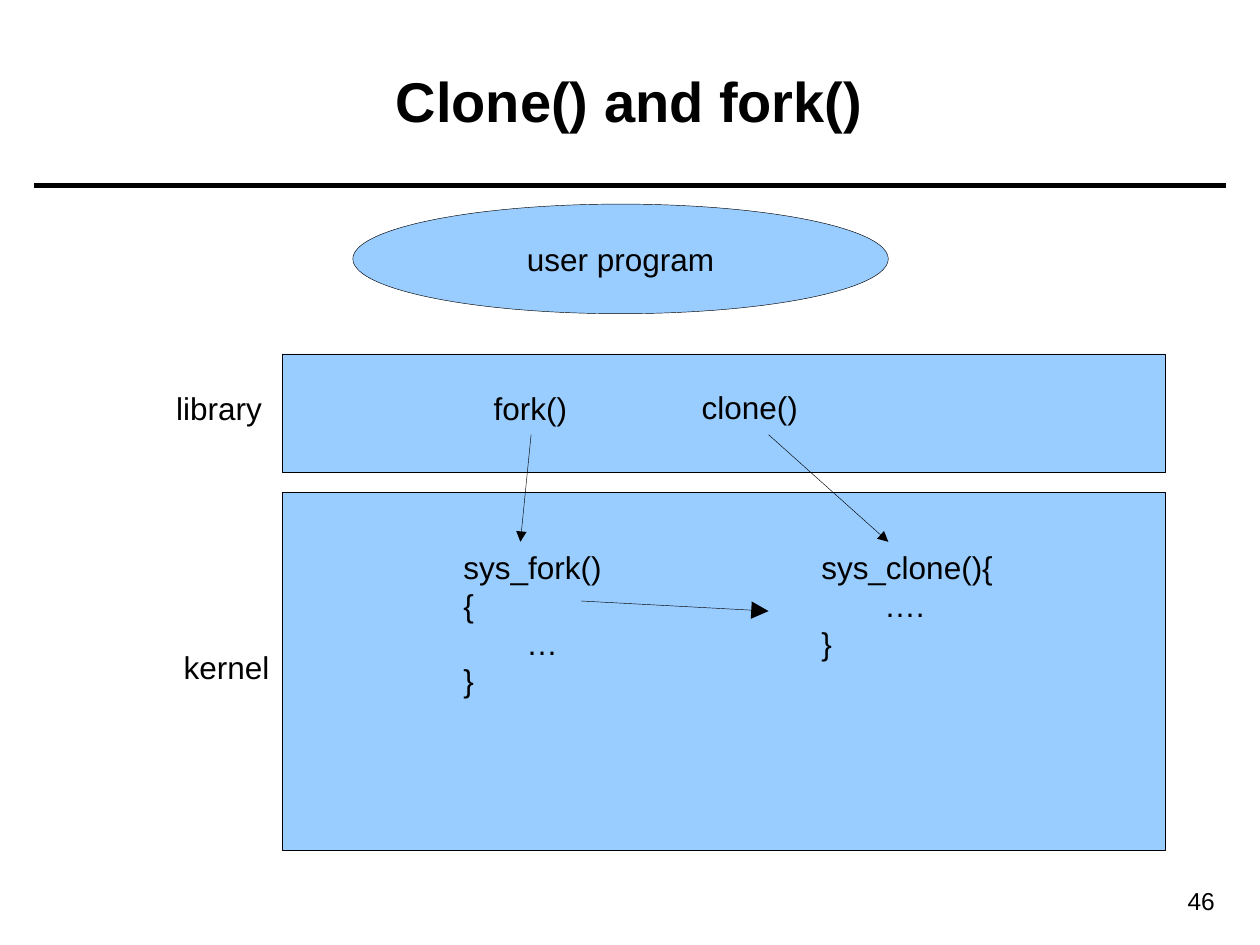
"""Build the slide on clone() and fork() as layers of user, library and kernel."""
from lxml.etree import SubElement
from pptx import Presentation
from pptx.dml.color import RGBColor
from pptx.enum.shapes import MSO_CONNECTOR, MSO_SHAPE
from pptx.enum.text import MSO_ANCHOR, MSO_AUTO_SIZE, PP_ALIGN
from pptx.oxml.ns import qn
from pptx.util import Inches, Pt

COLORS = {"ink": "000000", "fill": "99CCFF"}
COLS, ROWS = 100, 75
LEFT, WIDE = 22.4, 70.1

SHAPES = {
    "kernel": (MSO_SHAPE.RECTANGLE, (LEFT, 39.1, WIDE, 28.4), ""),
    "library": (MSO_SHAPE.RECTANGLE, (LEFT, 28.1, WIDE, 9.4), ""),
    "user": (MSO_SHAPE.OVAL, (28, 16.2, 42.5, 8.7), "user program"),
}
LABELS = [
    ("sys_clone(){\n\t….\n}", (64.2, 43, 15.6, 10)),
    ("sys_fork()\n{\n\t…\n}", (35.8, 43, 14.5, 13)),
    ("fork()", (38.2, 30.4, 7.9, 4.1)),
    ("clone()", (54.7, 30.3, 9.7, 4.1)),
    ("library", (13, 30.4, 8.8, 4)),
    ("kernel", (13.6, 50.9, 8.8, 4)),
]
TITLE = ("Clone() and fork()", (3.5, 1.7, 92.9, 12.5))
PAGE = ("46", (87, 69.8, 10.4, 3.4))
RULE = (2.7, 14.7, 97.3, 14.7)
ARROWS = [
    ((46.1, 47.7, 61, 48.5), "lg", None),
    ((61, 34.5, 70.5, 43), "med", None),
    ((42.1, 34.5, 41.3, 43), "med", "fork()"),
]

BODY = {"size": Pt(18), "name": "Arial", "bold": False}
HEAD = {**BODY, "size": Pt(32), "bold": True}
SMALL = {**BODY, "size": Pt(14)}
FREE = {"word_wrap": False, "auto_size": MSO_AUTO_SIZE.SHAPE_TO_FIT_TEXT}
MID = {"word_wrap": False, "vertical_anchor": MSO_ANCHOR.MIDDLE}
FIXED = {"word_wrap": True, "vertical_anchor": MSO_ANCHOR.MIDDLE}

deck = Presentation()
deck.slide_width, deck.slide_height = Inches(10), Inches(7.5)
slide = deck.slides.add_slide(deck.slide_layouts[6])


def place(cells):
    units = (deck.slide_width / COLS, deck.slide_height / ROWS) * 2
    return [round(cell * unit) for cell, unit in zip(cells, units)]


def tint(name):
    return RGBColor.from_string(COLORS[name])


def apply(item, values):
    for key, value in values.items():
        setattr(item, key, value)


def write(shape, text, font, frame, align=PP_ALIGN.LEFT):
    shape.text_frame.text = text
    apply(shape.text_frame, frame)
    for para in shape.text_frame.paragraphs:
        para.alignment = align
        for run in para.runs:
            apply(run.font, font)
            run.font.color.rgb = tint("ink")


def label(text, cells, font, frame, align=PP_ALIGN.LEFT):
    box = slide.shapes.add_textbox(*place(cells))
    write(box, text, font, frame, align)
    return box


def block(kind, cells, text):
    shape = slide.shapes.add_shape(kind, *place(cells))
    shape.shadow.inherit = False
    shape.fill.solid()
    shape.fill.fore_color.rgb = tint("fill")
    shape.line.color.rgb = tint("ink")
    shape.line.width = Pt(0.25)
    if text:
        write(shape, text, BODY, MID, PP_ALIGN.CENTER)


def link(cells, width, head=None, start=None):
    line = slide.shapes.add_connector(MSO_CONNECTOR.STRAIGHT, *place(cells))
    if start is not None:
        line.begin_connect(start, 2)
    line.line.color.rgb = tint("ink")
    line.line.width = Pt(width)
    if head:
        SubElement(line.line._get_or_add_ln(), qn("a:tailEnd"),
                   type="triangle", w=head, len=head)
    SubElement(line._element.spPr, qn("a:effectLst"))


link(RULE, 3)
label(*PAGE, SMALL, FIXED, PP_ALIGN.RIGHT)
label(*TITLE, HEAD, FIXED, PP_ALIGN.CENTER)
for shape in SHAPES.values():
    block(*shape)
boxes = {text: label(text, cells, BODY, FREE) for text, cells in LABELS}
for cells, head, start in ARROWS:
    link(cells, 0.25, head, boxes.get(start))

deck.save("out.pptx")
